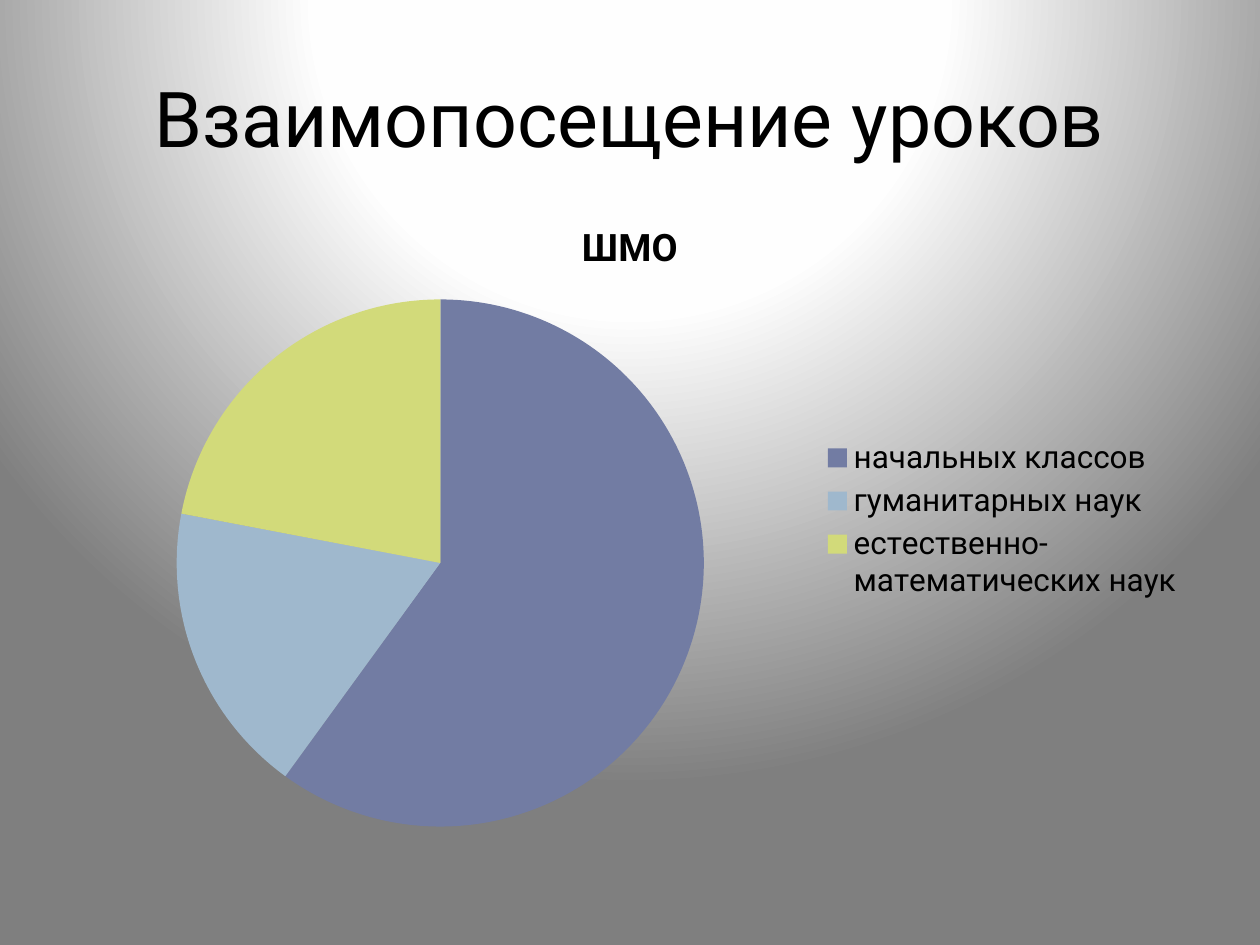
from pptx import Presentation
from pptx.chart.data import CategoryChartData
from pptx.enum import chart as chart_enum, text
from pptx.oxml import parse_xml
from pptx.oxml.ns import nsdecls
from pptx.util import Emu, Pt
from pptx.dml.color import RGBColor

PX = 914400 // 126
FONT = "Roboto"
COLORS = {
    "text": "000000",
    "glow": "FFFFFF",
    "glow_edge": "FEFEFE",
    "shade": "7F7F7F",
    "primary": "727CA3",
    "humanities": "9FB8CD",
    "science": "D2DA7A",
}
# Category, value, colour
LESSON_VISITS = [
    ("начальных классов", 60, "primary"),
    ("гуманитарных наук", 18, "humanities"),
    ("естественно-математических наук", 22, "science"),
]


def px(*lengths):
    return [Emu(length * PX) for length in lengths]


def color(name):
    return RGBColor.from_string(COLORS[name])


def style_font(font, size, bold=False):
    font.name = FONT
    font.size = Pt(size)
    font.bold = bold
    font.color.rgb = color("text")


def set_radial_background(slide, stops):
    stop_xml = "".join(
        f'<a:gs pos="{percent * 1000}"><a:srgbClr val="{COLORS[name]}"/></a:gs>'
        for percent, name in stops
    )
    background = parse_xml(
        f'<p:bg {nsdecls("p", "a")}><p:bgPr><a:gradFill rotWithShape="1">'
        f"<a:gsLst>{stop_xml}</a:gsLst>"
        '<a:path path="circle">'
        '<a:fillToRect l="50000" t="-80000" r="50000" b="180000"/></a:path>'
        "</a:gradFill><a:effectLst/></p:bgPr></p:bg>"
    )
    slide.element.cSld.insert(0, background)


def add_title(slide, title, box):
    text_frame = slide.shapes.add_textbox(*px(*box)).text_frame
    text_frame.word_wrap = True
    text_frame.vertical_anchor = text.MSO_ANCHOR.MIDDLE
    text_frame.text = title
    paragraph = text_frame.paragraphs[0]
    paragraph.alignment = text.PP_ALIGN.CENTER
    style_font(paragraph.runs[0].font, 44)


def add_pie(slide, title, slices, box):
    data = CategoryChartData()
    data.categories = [category for category, _, _ in slices]
    data.add_series(title, [value for _, value, _ in slices])
    chart = slide.shapes.add_chart(
        chart_enum.XL_CHART_TYPE.PIE, *px(*box), data
    ).chart
    style_font(chart.font, 18)

    # Chart title
    chart.has_title = True
    title_frame = chart.chart_title.text_frame
    title_frame.text = title
    style_font(title_frame.paragraphs[0].runs[0].font, 21.6, bold=True)
    chart.chart_title.include_in_layout = False

    # Legend
    chart.has_legend = True
    chart.legend.position = chart_enum.XL_LEGEND_POSITION.RIGHT
    chart.legend.include_in_layout = False
    style_font(chart.legend.font, 18)

    # Slice colours
    plot = chart.plots[0]
    plot.vary_by_categories = True
    for index, (_, _, name) in enumerate(slices):
        fill = plot.series[0].points[index].format.fill
        fill.solid()
        fill.fore_color.rgb = color(name)


def main():
    presentation = Presentation()
    presentation.slide_width, presentation.slide_height = px(1260, 945)
    slide = presentation.slides.add_slide(presentation.slide_layouts[6])

    set_radial_background(slide, [(0, "glow"), (40, "glow_edge"), (100, "shade")])
    add_title(slide, "Взаимопосещение уроков", (63, 38, 1134, 158))
    add_pie(slide, "ШМО", LESSON_VISITS, (63, 195, 1134, 649))

    presentation.save("out.pptx")


if __name__ == "__main__":
    main()
